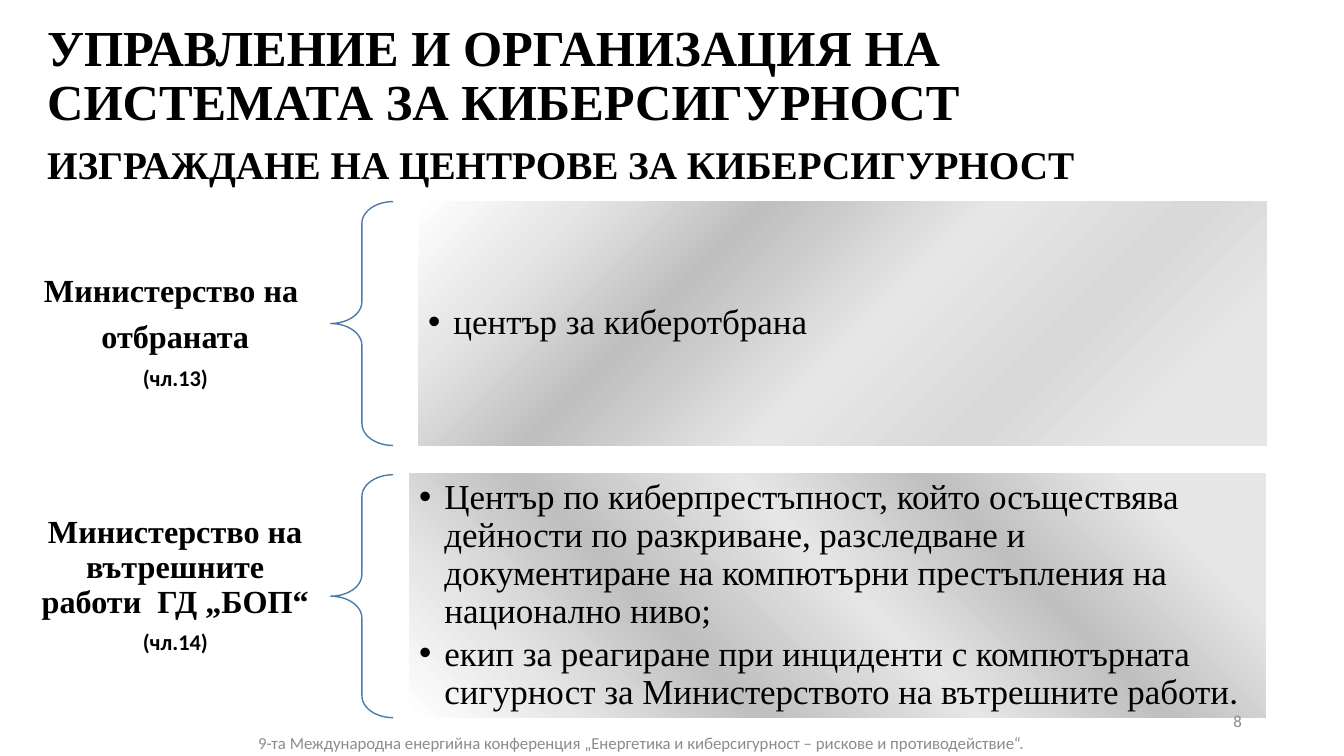
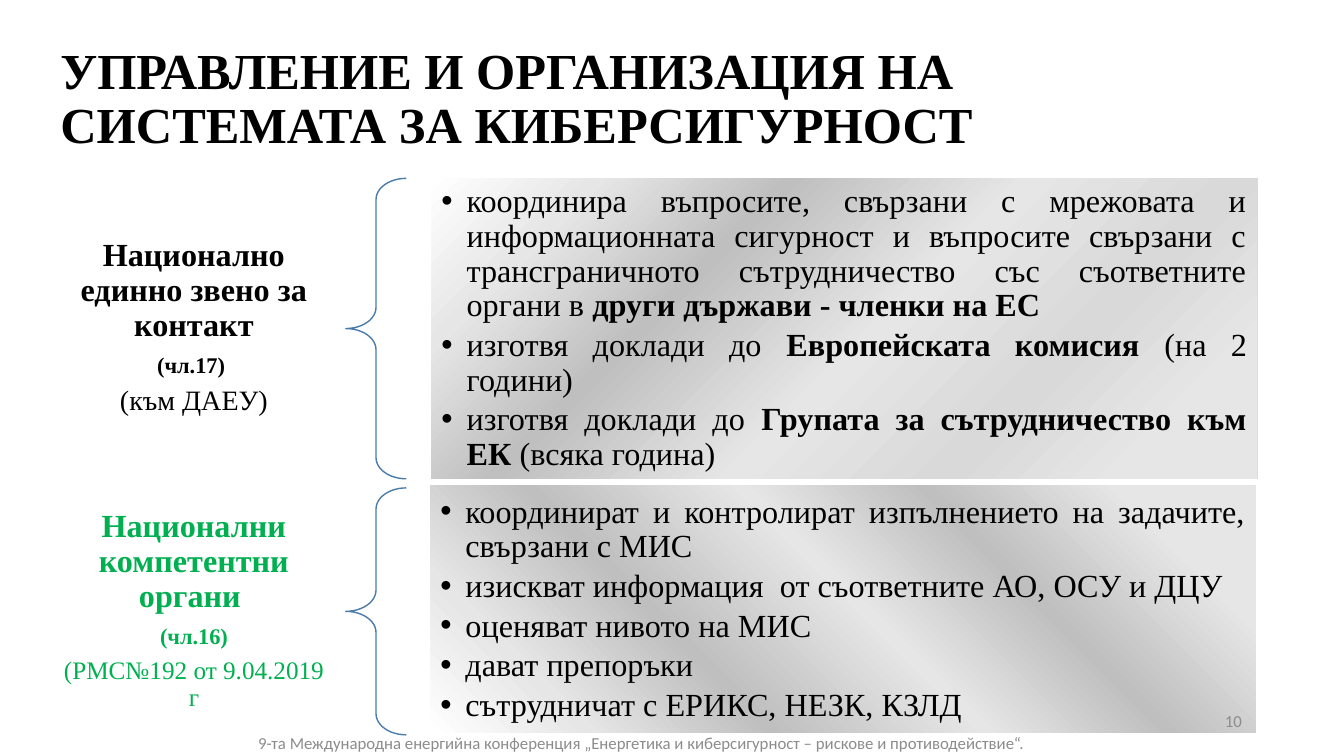
from collections import namedtuple

from lxml.etree import SubElement
from pptx import Presentation
from pptx.dml.color import RGBColor
from pptx.enum.shapes import MSO_SHAPE as Shape
from pptx.enum.text import MSO_ANCHOR as Anchor, PP_ALIGN as Align
from pptx.oxml.ns import qn
from pptx.util import Pt

COLORS = {
    "text": "000000",
    "accent": "00B050",
    "muted": "8C8C8C",
    "brace": "497CAB",
    "white": "FFFFFF",
    "light": "E6E6E6",
    "middle": "D9D9D9",
    "dark": "BFBFBF",
}
SERIF, SANS = "Times New Roman", "Calibri"
TITLE = "УПРАВЛЕНИЕ И ОРГАНИЗАЦИЯ НА СИСТЕМАТА ЗА КИБЕРСИГУРНОСТ"
FOOTER = ("9-та Международна енергийна конференция „Eнергетика и "
          "киберсигурност – рискове и противодействие“.")

Box = namedtuple("Box", "left top width height")
Run = namedtuple("Run", "text size bold font", defaults=(23, False, SERIF))
Sheen = namedtuple("Sheen", "angle stops")
Row = namedtuple("Row", "label label_box brace_box panel panel_box sheen color align",
                 defaults=("text", Align.LEFT))

# Angles run counter-clockwise; stops are (percent, colour name).
FALLING = Sheen(315, [(0, "white"), (15, "light"), (32, "dark"),
                      (53, "light"), (72, "middle"), (88, "light")])
RISING = Sheen(45, [(0, "white"), (15, "light"), (32, "dark"),
                    (52, "light"), (69, "dark"), (87, "light")])


def rgb(name):
    return RGBColor.from_string(COLORS[name])


def place(box):
    return [Pt(length) for length in box]


def write(shape, paragraphs, color="text", align=Align.LEFT, insets=(7.2, 3.6),
          spacing=0.9, after=0, bullets=False):
    """Fill a shape with lists of runs; after is a share of the text size."""
    frame = shape.text_frame
    frame.word_wrap = True
    frame.vertical_anchor = Anchor.MIDDLE
    frame.margin_left = frame.margin_right = Pt(insets[0])
    frame.margin_top = frame.margin_bottom = Pt(insets[1])
    for index, runs in enumerate(paragraphs):
        para = frame.paragraphs[0] if index == 0 else frame.add_paragraph()
        para.alignment = align
        para.line_spacing = spacing
        para.space_after = Pt(runs[0].size * after)
        if bullets:
            add_bullet(para)
        for run in runs:
            span = para.add_run()
            span.text = run.text
            span.font.size = Pt(run.size)
            span.font.bold = run.bold
            span.font.name = run.font
            span.font.color.rgb = rgb(color)


def add_bullet(para, indent=18):
    properties = para._p.get_or_add_pPr()
    properties.set("marL", str(Pt(indent)))
    properties.set("indent", str(-Pt(indent)))
    SubElement(properties, qn("a:buFont"), typeface="Arial")
    SubElement(properties, qn("a:buChar"), char="•")


def add_text(page, box, paragraphs, **style):
    write(page.shapes.add_textbox(*place(box)), paragraphs, **style)


def add_brace(page, box):
    brace = page.shapes.add_shape(Shape.LEFT_BRACE, *place(box))
    brace.shadow.inherit = False
    brace.adjustments[0] = 0.35
    brace.adjustments[1] = 0.5
    brace.fill.background()
    brace.line.color.rgb = rgb("brace")
    brace.line.width = Pt(1)


def add_panel(page, box, sheen, paragraphs, align):
    panel = page.shapes.add_shape(Shape.RECTANGLE, *place(box))
    panel.shadow.inherit = False
    panel.line.fill.background()
    panel.fill.gradient()
    panel.fill.gradient_angle = sheen.angle
    stops = panel._element.spPr.find(".//" + qn("a:gsLst"))
    for stop in list(stops):
        stops.remove(stop)
    for percent, name in sheen.stops:
        stop = SubElement(stops, qn("a:gs"), pos=str(percent * 1000))
        SubElement(stop, qn("a:srgbClr"), val=COLORS[name])
    write(panel, paragraphs, align=align, insets=(7.2, 7.2), after=0.15, bullets=True)


def add_row(page, row):
    add_text(page, row.label_box, row.label, color=row.color, align=Align.CENTER,
             insets=(12.8, 4.6), after=0.35)
    add_brace(page, row.brace_box)
    add_panel(page, row.panel_box, row.sheen, row.panel, row.align)


def add_heading(page, box, text, size):
    add_text(page, box, [[Run(text, size, True)]])


def add_footer(page, number):
    for box, text, align in (
        (Box(53.3, 513.4, 810, 33.8), FOOTER, Align.CENTER),
        (Box(678.2, 500.4, 216, 28.8), str(number), Align.RIGHT),
    ):
        add_text(page, box, [[Run(text, 12, False, SANS)]], color="muted",
                 align=align, spacing=1)


def add_page(deck, title_left, title_top, rows, number):
    page = deck.slides.add_slide(deck.slide_layouts[6])
    for row in rows:
        add_row(page, row)
    add_heading(page, Box(title_left, title_top, 865.4, 41), TITLE, 36)
    add_footer(page, number)
    return page


def centres_page(deck):
    rows = [
        Row(
            label=[[Run("Министерство на ", bold=True)],
                   [Run("отбраната", bold=True)],
                   [Run("(чл.13)", 16, True, SANS)]],
            label_box=Box(13.7, 204.5, 223.2, 67),
            brace_box=Box(236.2, 144, 44.6, 174.2),
            panel=[[Run("център за киберотбрана", 25)]],
            panel_box=Box(298.8, 144, 606.2, 174.2),
            sheen=FALLING,
        ),
        Row(
            label=[[Run("Министерство на вътрешните работи  ГД „БОП“", bold=True)],
                   [Run("(чл.14)", 16, True, SANS)]],
            label_box=Box(13.7, 386, 223.2, 64.8),
            brace_box=Box(236.2, 339.1, 44.6, 173.5),
            panel=[[Run("Център по киберпрестъпност, който осъществява дейности по "
                        "разкриване, разследване и документиране на компютърни "
                        "престъпления на национално ниво;", 25)],
                   [Run("екип за реагиране при инциденти с компютърната сигурност "
                        "за Министерството на вътрешните работи", 25),
                    Run(".", 25, False, SANS)]],
            panel_box=Box(292.3, 338.4, 612, 174.2),
            sheen=RISING,
        ),
    ]
    page = add_page(deck, 26.6, 34.6, rows, 8)
    add_heading(page, Box(26.6, 101.5, 905.8, 34.6),
                "ИЗГРАЖДАНЕ НА ЦЕНТРОВЕ ЗА КИБЕРСИГУРНОСТ", 28)


def authorities_page(deck):
    rows = [
        Row(
            label=[[Run("Национално единно звено за контакт", bold=True)],
                   [Run("(чл.17) ", 16, True)],
                   [Run("(към ДАЕУ)", 20)]],
            label_box=Box(30.2, 167, 216.7, 134.6),
            brace_box=Box(247, 127.4, 43.2, 214.6),
            panel=[[Run("координира въпросите, свързани с мрежовата и "
                        "информационната сигурност и въпросите свързани с "
                        "трансграничното сътрудничество със съответните органи в "),
                    Run("други държави - членки на ЕС", bold=True)],
                   [Run("изготвя доклади до "),
                    Run("Европейската комисия ", bold=True),
                    Run("(на 2 години)")],
                   [Run("изготвя доклади до "),
                    Run("Групата за сътрудничество към ЕК ", bold=True),
                    Run("(всяка година)")]],
            panel_box=Box(308.2, 127.4, 589.7, 214.6),
            sheen=FALLING,
            align=Align.JUSTIFY,
        ),
        Row(
            label=[[Run("Национални компетентни органи ", bold=True)],
                   [Run("(чл.16)", 16, True)],
                   [Run("(РМС№192 от 9.04.2019 г", 18)]],
            label_box=Box(30.2, 360, 216.7, 152.6),
            brace_box=Box(247, 348.5, 43.2, 176.4),
            panel=[[Run(text)] for text in (
                "координират и контролират изпълнението на задачите, свързани с МИС",
                "изискват информация  от съответните АО, ОСУ и ДЦУ",
                "оценяват нивото на МИС",
                "дават препоръки",
                "сътрудничат с ЕРИКС, НЕЗК, КЗЛД",
            )],
            panel_box=Box(307.4, 347, 589.7, 176.4),
            sheen=RISING,
            color="accent",
            align=Align.JUSTIFY,
        ),
    ]
    add_page(deck, 36, 51.1, rows, 10)


def main():
    deck = Presentation()
    deck.slide_width, deck.slide_height = Pt(960), Pt(540)
    centres_page(deck)
    authorities_page(deck)
    deck.save("out.pptx")


if __name__ == "__main__":
    main()
